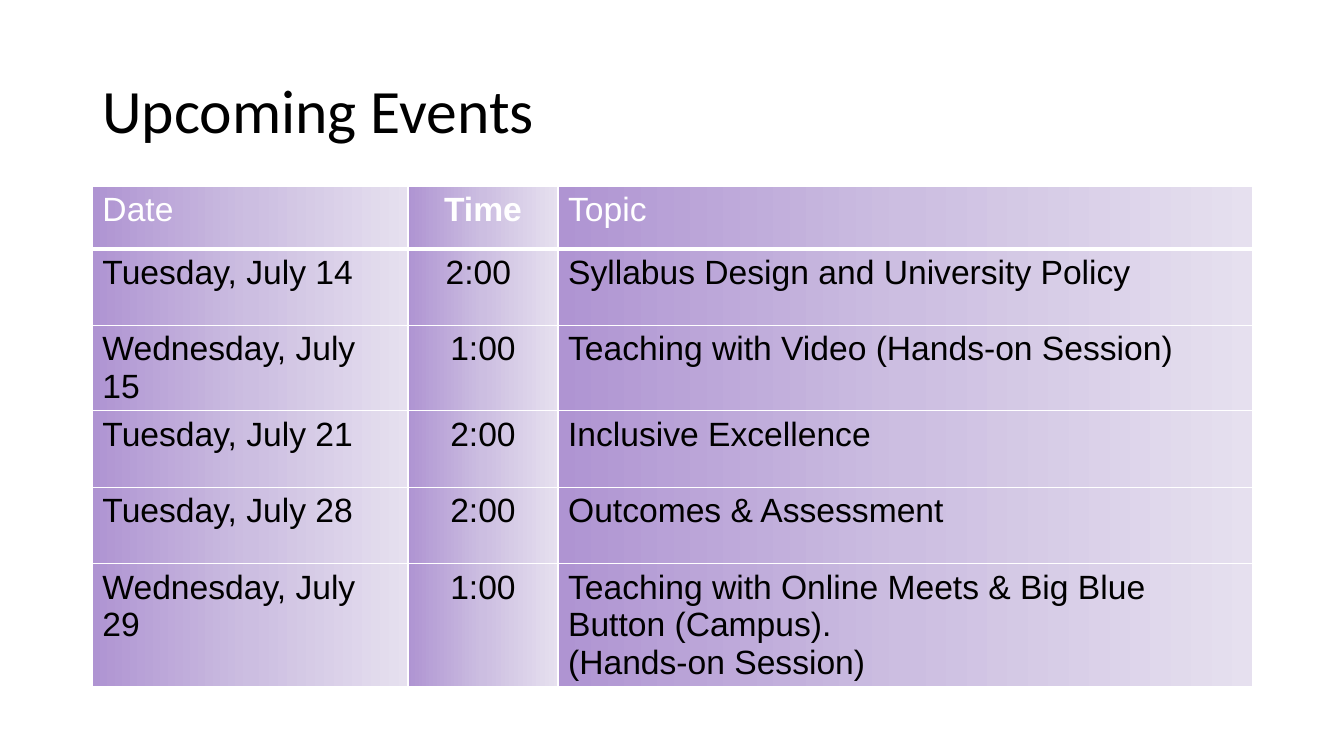
"""Build the upcoming events slide."""
from dataclasses import dataclass

import lxml.etree
import pptx
import pptx.dml.color
import pptx.enum.text
import pptx.oxml.ns
import pptx.slide
import pptx.table
import pptx.text.text
import pptx.util

WIDE, HIGH = 13.33, 7.5
COLS, ROWS = 160, 90
WHITE, BLACK = "FFFFFF", "000000"
STOPS = ((0, "AF94D2"), (50, "CCBEE1"), (100, "E6E0EF"))
ALIGN = pptx.enum.text.PP_ALIGN
LEFT = 11
SPANS = (37.56, 17.88, 82.68)
SIDES = (ALIGN.LEFT, ALIGN.CENTER, ALIGN.LEFT)


@dataclass(frozen=True)
class Event:
    """Hold one row of the schedule."""
    date: str
    time: str
    topic: str


EVENTS = (
    Event("Date", "Time", "Topic"),
    Event("Tuesday, July 14", "2:00 ", "Syllabus Design and University Policy"),
    Event("Wednesday, July 15", "1:00", "Teaching with Video (Hands-on Session)"),
    Event("Tuesday, July 21", "2:00", "Inclusive Excellence"),
    Event("Tuesday, July 28", "2:00", "Outcomes & Assessment"),
    Event("Wednesday, July 29", "1:00",
          "Teaching with Online Meets & Big Blue Button (Campus).\n(Hands-on Session)"),
)


def across(cols: float) -> int:
    """Turn grid columns into a length."""
    return pptx.util.Inches(WIDE * cols / COLS)


def down(rows: float) -> int:
    """Turn grid rows into a length."""
    return pptx.util.Inches(HIGH * rows / ROWS)


def color(code: str) -> pptx.dml.color.RGBColor:
    """Turn a hex string into a colour."""
    return pptx.dml.color.RGBColor.from_string(code)


def style(frame: pptx.text.text.TextFrame, face: str, size: float, code: str,
          bold: bool, side: ALIGN) -> None:
    """Format every run of a text frame."""
    for para in frame.paragraphs:
        para.alignment = side
        for run in para.runs:
            font = run.font
            font.name, font.size, font.bold = face, pptx.util.Pt(size), bold
            font.color.rgb = color(code)


def node(top: lxml.etree._Element, tag: str, **attrs: str) -> lxml.etree._Element:
    """Add a drawing element below another."""
    return lxml.etree.SubElement(top, pptx.oxml.ns.qn("a:" + tag), attrs)


def paint(cell: pptx.table._Cell, edges: dict[str, float]) -> None:
    """Give a cell white borders and a gradient fill."""
    props = cell._tc.get_or_add_tcPr()
    for edge, width in edges.items():
        line = node(props, "ln" + edge, w=str(pptx.util.Pt(width)))
        node(node(line, "solidFill"), "srgbClr", val=WHITE)
    grad = node(props, "gradFill", rotWithShape="1")
    stops = node(grad, "gsLst")
    for share, code in STOPS:
        node(node(stops, "gs", pos=str(share * 1000)), "srgbClr", val=code)
    node(grad, "lin", ang="0", scaled="0")


def head(slide: pptx.slide.Slide) -> None:
    """Place the slide title."""
    title = slide.shapes.title
    title.left, title.top = across(LEFT), down(4.8)
    title.width, title.height = across(138), down(17.4)
    frame = title.text_frame
    frame.text = "Upcoming Events"
    frame.word_wrap = True
    frame.auto_size = pptx.enum.text.MSO_AUTO_SIZE.NONE
    frame.vertical_anchor = pptx.enum.text.MSO_ANCHOR.MIDDLE
    frame.paragraphs[0].line_spacing = 0.9
    style(frame, "Calibri", 44, BLACK, False, ALIGN.LEFT)


def grid(slide: pptx.slide.Slide) -> None:
    """Draw the schedule table."""
    tall = [7.44] + [9.12] * (len(EVENTS) - 1)
    table = slide.shapes.add_table(
        len(EVENTS), len(SPANS), across(LEFT), down(22.2),
        across(sum(SPANS)), down(sum(tall))).table
    for col, span in zip(table.columns, SPANS):
        col.width = across(span)
    for i, event in enumerate(EVENTS):
        table.rows[i].height = down(tall[i])
        edges = {"L": 1, "R": 1, "T": 3 if i == 1 else 1, "B": 3 if i == 0 else 1}
        for j, text in enumerate((event.date, event.time, event.topic)):
            cell = table.cell(i, j)
            cell.text_frame.text = text
            style(cell.text_frame, "Arial", 24, BLACK if i else WHITE,
                  i == 0 and j == 1, SIDES[j])
            paint(cell, edges)


def main() -> None:
    """Build and save the deck."""
    deck = pptx.Presentation()
    deck.slide_width = pptx.util.Inches(WIDE)
    deck.slide_height = pptx.util.Inches(HIGH)
    slide = deck.slides.add_slide(deck.slide_layouts[5])
    head(slide)
    grid(slide)
    deck.save("out.pptx")


if __name__ == "__main__":
    main()
